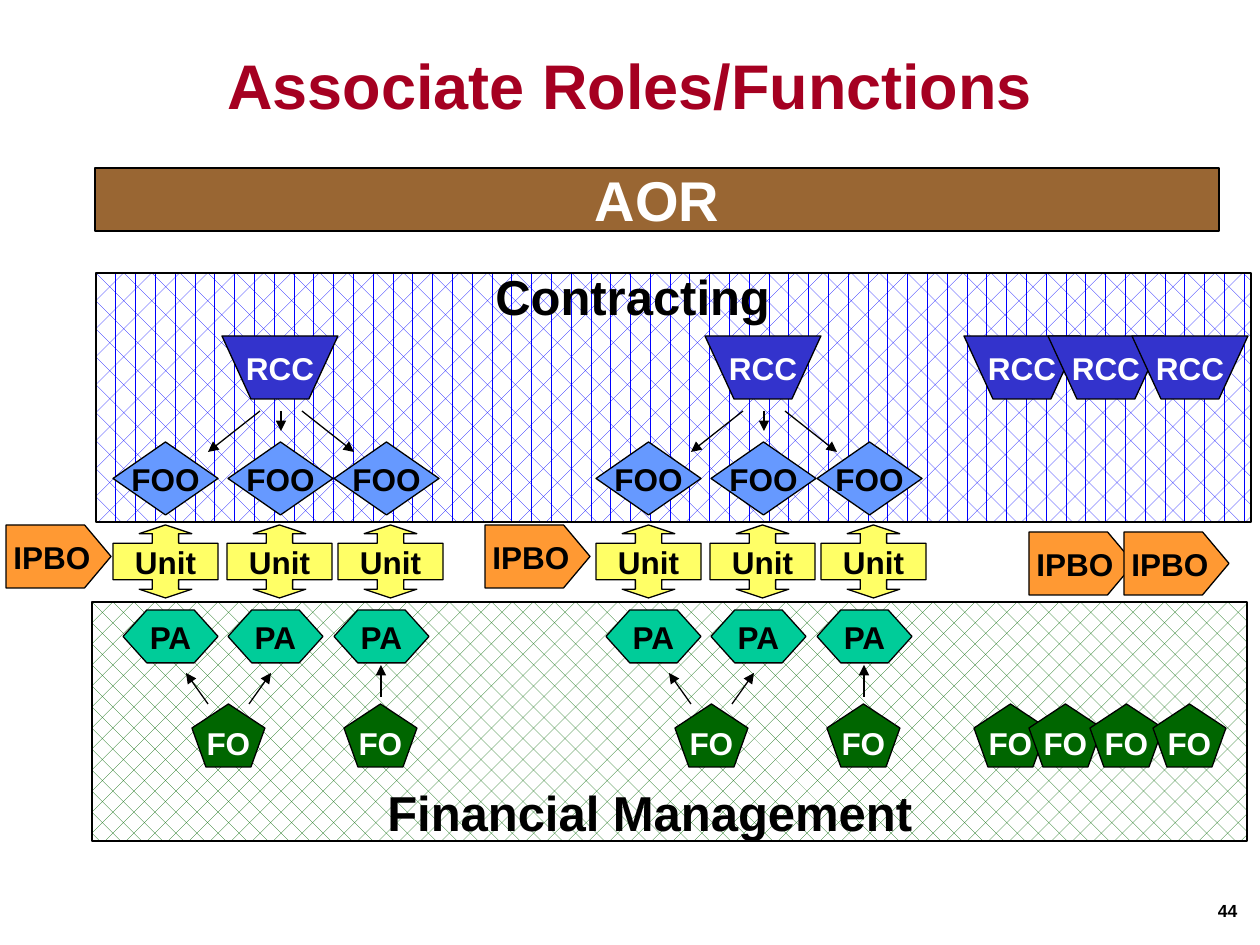
from dataclasses import dataclass

from lxml.etree import SubElement
from pptx import Presentation
from pptx.dml.color import RGBColor
from pptx.enum.dml import MSO_PATTERN
from pptx.enum.shapes import MSO_CONNECTOR, MSO_SHAPE
from pptx.enum.text import MSO_ANCHOR, PP_ALIGN
from pptx.oxml.ns import qn
from pptx.util import Emu, Pt

EMU_PER_PX = 914400 / 126


@dataclass(frozen=True)
class Theme:
    font: str = "Arial"
    black: str = "000000"
    white: str = "FFFFFF"
    title: str = "A50021"
    contracting: str = "0000FF"
    finance: str = "006600"
    title_size: int = 36
    aor_size: int = 32
    region_size: int = 28
    label_size: int = 18
    number_size: int = 10
    line_width: float = 0.75


@dataclass(frozen=True)
class Role:
    label: str
    width: int
    height: int
    fill: str
    ink: str
    preset: object = None
    adjustments: tuple = ()


THEME = Theme()
RCC = Role("RCC", 116, 63, "3333CC", THEME.white)
FOO = Role("FOO", 105, 73, "6699FF", THEME.black, MSO_SHAPE.DIAMOND)
UNIT = Role("Unit", 105, 73, "FFFF66", THEME.black,
            MSO_SHAPE.UP_DOWN_ARROW_CALLOUT, (0.36, 0.36, 0.12, 0.5))
PA = Role("PA", 95, 53, "00CC99", THEME.black, MSO_SHAPE.HEXAGON, (0.45,))
FO = Role("FO", 73, 63, "006600", THEME.white, MSO_SHAPE.REGULAR_PENTAGON)
IPBO = Role("IPBO", 105, 63, "FF9933", THEME.black, MSO_SHAPE.PENTAGON, (0.42,))


def px(value):
    return Emu(round(value * EMU_PER_PX))


def color(value):
    return RGBColor.from_string(value)


def write(shape, text, size, ink, align=PP_ALIGN.CENTER, anchor=MSO_ANCHOR.MIDDLE):
    frame = shape.text_frame
    frame.text = text
    frame.word_wrap = False
    frame.vertical_anchor = anchor
    paragraph = frame.paragraphs[0]
    paragraph.alignment = align
    font = paragraph.runs[0].font
    font.name, font.size, font.bold = THEME.font, Pt(size), True
    font.color.rgb = color(ink)


def outline(shape):
    shape.shadow.inherit = False
    shape.line.color.rgb = color(THEME.black)
    shape.line.width = Pt(THEME.line_width)


def add_preset(slide, preset, left, top, width, height):
    shape = slide.shapes.add_shape(preset, px(left), px(top), px(width), px(height))
    outline(shape)
    return shape


def add_trapezoid(slide, left, top, width, height):
    """Trapezoid standing on its short side."""
    builder = slide.shapes.build_freeform(0, 0, scale=EMU_PER_PX)
    inset = width // 4
    builder.add_line_segments(
        [(inset, height), (width - inset, height), (width, 0)], close=True)
    shape = builder.convert_to_shape(px(left), px(top))
    outline(shape)
    return shape


def add_role(slide, role, left, top):
    if role.preset is None:
        shape = add_trapezoid(slide, left, top, role.width, role.height)
    else:
        shape = add_preset(slide, role.preset, left, top, role.width, role.height)
    for index, value in enumerate(role.adjustments):
        shape.adjustments[index] = value
    shape.fill.solid()
    shape.fill.fore_color.rgb = color(role.fill)
    write(shape, role.label, THEME.label_size, role.ink)


def add_row(slide, role, lefts, top):
    for left in lefts:
        add_role(slide, role, left, top)


def add_arrow(slide, x1, y1, x2, y2):
    arrow = slide.shapes.add_connector(
        MSO_CONNECTOR.STRAIGHT, px(x1), px(y1), px(x2), px(y2))
    arrow.line.color.rgb = color(THEME.black)
    arrow.line.width = Pt(THEME.line_width)
    SubElement(arrow.line._get_or_add_ln(), qn("a:tailEnd"), type="triangle")
    SubElement(arrow._element.spPr, qn("a:effectLst"))


def add_title(slide, left, top, width, height):
    title = slide.shapes.title
    title.left, title.top = px(left), px(top)
    title.width, title.height = px(width), px(height)
    write(title, "Associate Roles/Functions", THEME.title_size, THEME.title)
    title.text_frame.word_wrap = True


def add_aor_bar(slide, left, top, width, height):
    bar = add_preset(slide, MSO_SHAPE.FLOWCHART_PROCESS, left, top, width, height)
    bar.fill.solid()
    bar.fill.fore_color.rgb = color("996633")
    write(bar, "AOR", THEME.aor_size, THEME.white)


def add_region(slide, left, top, width, height, pattern, ink):
    region = add_preset(slide, MSO_SHAPE.RECTANGLE, left, top, width, height)
    region.fill.patterned()
    region.fill.pattern = pattern
    region.fill.fore_color.rgb = color(ink)
    region.fill.back_color.rgb = color(THEME.white)


def add_region_name(slide, text, left, top, width, height):
    name = slide.shapes.add_textbox(px(left), px(top), px(width), px(height))
    write(name, text, THEME.region_size, THEME.black, PP_ALIGN.LEFT, MSO_ANCHOR.TOP)


def add_team(slide, left, top):
    """One RCC with its offices, units, agents and finance officers."""
    rows = [(RCC, 0, (109,)), (FOO, 106, (0, 115, 221)), (PA, 274, (10, 115, 221)),
            (FO, 368, (79, 231)), (UNIT, 189, (0, 114, 225))]
    for role, drop, offsets in rows:
        add_row(slide, role, [left + offset for offset in offsets], top + drop)

    rcc_to_foo = [(147, 75, 95, 116), (189, 75, 241, 116), (168, 75, 168, 95)]
    fo_to_pa = [(95, 368, 73, 337), (136, 368, 158, 337), (268, 361, 268, 329)]
    for x1, y1, x2, y2 in rcc_to_foo + fo_to_pa:
        add_arrow(slide, left + x1, top + y1, left + x2, top + y2)


def add_reserve(slide, left, top):
    """Overlapping roles that belong to no team."""
    rows = [(FO, 368, (10, 65, 126, 189)), (IPBO, 196, (65, 160)),
            (RCC, 0, (0, 84, 168))]
    for role, drop, offsets in rows:
        add_row(slide, role, [left + offset for offset in offsets], top + drop)


def add_page_number(slide, left, top, width, height):
    number = slide.shapes.add_textbox(px(left), px(top), px(width), px(height))
    frame = number.text_frame
    frame.margin_left = frame.margin_right = frame.margin_top = frame.margin_bottom = 0
    write(number, "44", THEME.number_size, THEME.black, PP_ALIGN.LEFT)
    frame.paragraphs[0].line_spacing = 0.85


def main():
    prs = Presentation()
    prs.slide_width, prs.slide_height = px(1260), px(945)
    slide = prs.slides.add_slide(prs.slide_layouts[5])

    add_page_number(slide, 1218, 903, 21, 18)
    add_region(slide, 92, 602, 1155, 239, MSO_PATTERN.DOTTED_DIAMOND, THEME.finance)
    add_region(slide, 96, 273, 1155, 249, MSO_PATTERN.DIVOT, THEME.contracting)
    add_title(slide, 0, 5, 1260, 158)
    add_aor_bar(slide, 95, 168, 1124, 63)
    for team_left in (113, 596):
        add_team(slide, team_left, 336)
    add_row(slide, IPBO, (6, 485), 525)
    add_reserve(slide, 964, 336)
    add_region_name(slide, "Financial Management", 375, 776, 552, 72)
    add_region_name(slide, "Contracting", 483, 260, 301, 72)

    prs.save("out.pptx")


if __name__ == "__main__":
    main()
